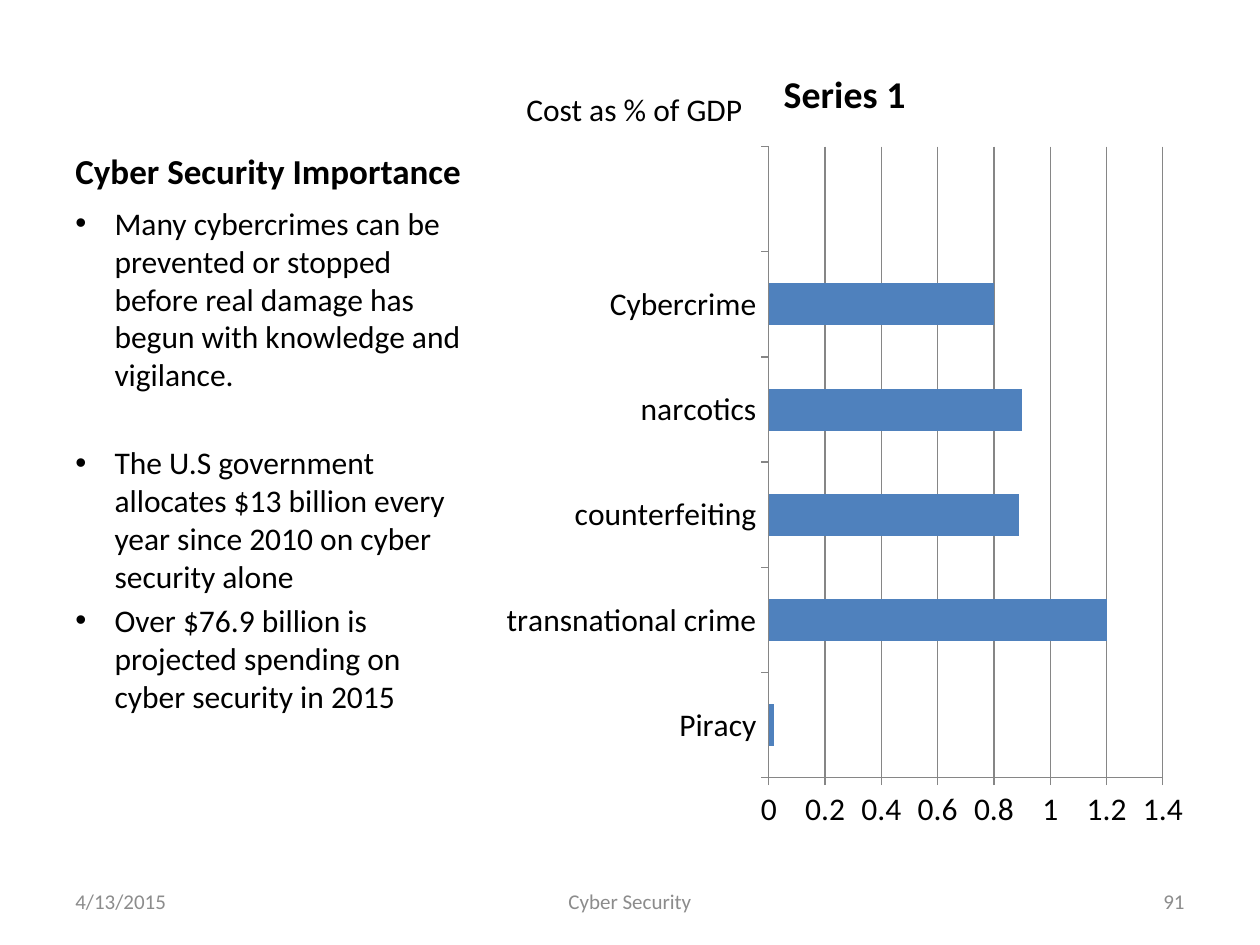
from lxml import etree
from pptx import Presentation
from pptx import util as u
from pptx.chart import data as chart_data
from pptx.dml.color import RGBColor
from pptx.enum import chart as ch, text as tx
from pptx.oxml.ns import qn

BLACK = RGBColor(0x00, 0x00, 0x00)
GRAY = RGBColor(0x8C, 0x8C, 0x8C)
LINE_GRAY = RGBColor(0x86, 0x86, 0x86)
BLUE = RGBColor(0x4F, 0x81, 0xBD)
FONT = "Calibri"


def set_font(font, size, color=BLACK, bold=False):
    font.name, font.size, font.bold = FONT, u.Pt(size), bold
    font.color.rgb = color


def add_text(box, lines, size, anchor=tx.MSO_ANCHOR.TOP,
             align=tx.PP_ALIGN.LEFT, color=BLACK, bold=False):
    frame = slide.shapes.add_textbox(*(u.Cm(v) for v in box)).text_frame
    frame.word_wrap = True
    frame.vertical_anchor = anchor
    frame.text = "\n".join(lines)
    for paragraph in frame.paragraphs:
        paragraph.alignment = align
        set_font(paragraph.font, size, color, bold)
    return frame


prs = Presentation()
prs.slide_width, prs.slide_height = u.Cm(25.4), u.Cm(19.05)
slide = prs.slides.add_slide(prs.slide_layouts[6])

# Heading
add_text((1.27, 0.76, 8.36, 3.23), ["Cyber Security Importance"], 20,
         anchor=tx.MSO_ANCHOR.BOTTOM, bold=True)

# Bulleted points, with a wider gap before the second
points = add_text((1.27, 3.99, 8.36, 13.03), [
    "Many cybercrimes can be prevented or stopped before real damage has "
    "begun with knowledge and vigilance.",
    "The U.S government allocates $13 billion every year since 2010 on cyber "
    "security alone",
    "Over $76.9 billion is projected spending on cyber security in 2015",
], 18)
for point, gap in zip(points.paragraphs, (3.6, 28.8, 3.6)):
    point.space_before = u.Pt(gap)
    props = point._p.get_or_add_pPr()
    props.set("marL", str(u.Cm(0.79)))
    props.set("indent", str(-u.Cm(0.79)))
    etree.SubElement(props, qn("a:buFont")).set("typeface", "Arial")
    etree.SubElement(props, qn("a:buChar")).set("char", "•")
    # Bullets come before the default run properties
    props.append(props.find(qn("a:defRPr")))

# Cost chart, with an empty category on top
costs = chart_data.CategoryChartData()
costs.categories = ["Piracy", "transnational crime", "counterfeiting",
                    "narcotics", "Cybercrime", ""]
costs.add_series("Series 1", (0.02, 1.2, 0.89, 0.9, 0.8, None))
cost_chart = slide.shapes.add_chart(
    ch.XL_CHART_TYPE.BAR_CLUSTERED, u.Cm(9.93), u.Cm(0.76), u.Cm(14.2),
    u.Cm(16.26), costs).chart
set_font(cost_chart.font, 18)
cost_chart.has_legend = False
cost_chart.has_title = True
chart_title = cost_chart.chart_title
chart_title.include_in_layout = False
chart_title.text_frame.text = "Series 1"
set_font(chart_title.text_frame.paragraphs[0].font, 21.6, bold=True)

bars = cost_chart.plots[0]
bars.gap_width = 150
bars.vary_by_categories = False
bars.series[0].format.fill.solid()
bars.series[0].format.fill.fore_color.rgb = BLUE

# Axes and gridlines
crimes, shares = cost_chart.category_axis, cost_chart.value_axis
crimes.has_major_gridlines = False
shares.has_major_gridlines = True
shares.minimum_scale, shares.maximum_scale, shares.major_unit = 0, 1.4, 0.2
shares.tick_labels.number_format = "General"
shares.tick_labels.number_format_is_linked = False
for axis in (crimes, shares):
    axis.major_tick_mark = ch.XL_TICK_MARK.OUTSIDE
    axis.minor_tick_mark = ch.XL_TICK_MARK.NONE
for part in (crimes, shares, shares.major_gridlines):
    part.format.line.color.rgb = LINE_GRAY
    part.format.line.width = u.Pt(0.75)

# Footer: date, topic, page number
for left, width, label, align in (
        (1.27, 5.93, "4/13/2015", tx.PP_ALIGN.LEFT),
        (8.68, 8.04, "Cyber Security", tx.PP_ALIGN.CENTER),
        (18.2, 5.93, "91", tx.PP_ALIGN.RIGHT)):
    add_text((left, 17.66, width, 1.01), [label], 12,
             tx.MSO_ANCHOR.MIDDLE, align, GRAY)

# Chart caption
add_text((10.36, 1.7, 5.28, 1.03), ["Cost as % of GDP"], 18)

prs.save("out.pptx")
